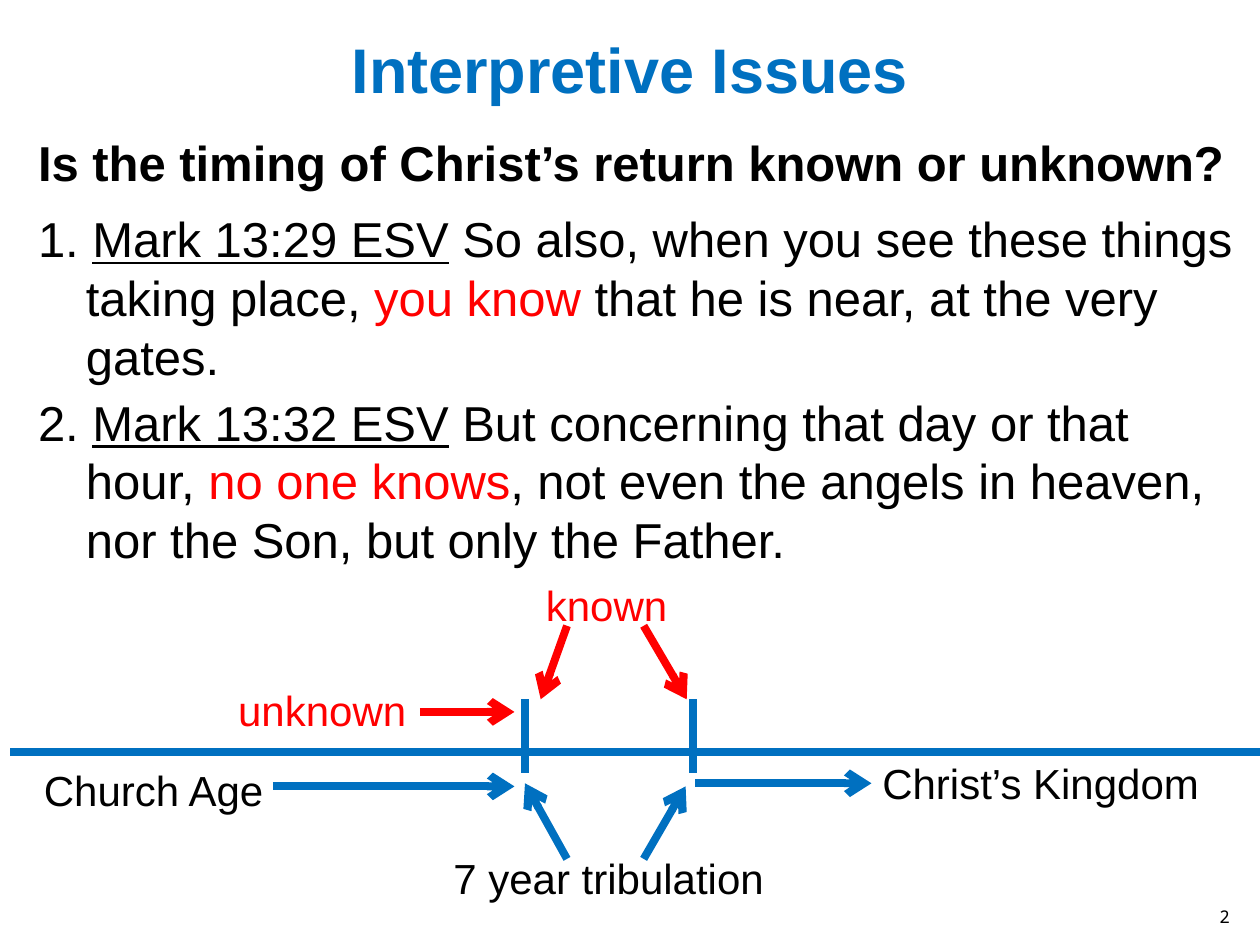
import pptx
import pptx.dml.color
import pptx.enum.shapes
import pptx.enum.text
import pptx.oxml
import pptx.oxml.ns
import pptx.util
from dataclasses import dataclass

COLUMNS, ROWS = 120, 90
CELL = pptx.util.Inches(10) // COLUMNS
ALIGN = pptx.enum.text.PP_ALIGN
ANCHOR = pptx.enum.text.MSO_ANCHOR


@dataclass(frozen=True)
class Theme:
    font: str = "Arial"
    number_font: str = "Noto Sans Mono"
    blue: str = "0070C0"
    red: str = "FF0000"
    black: str = "000000"
    title: int = 36
    body: int = 28
    label: int = 24
    number: int = 10
    stroke: float = 4.5


THEME = Theme()


def grid(*cells):
    """Turn counts of grid cells into slide lengths."""
    return [round(cell * CELL) for cell in cells]


def style(font, size, color=THEME.black, bold=False, underline=False, name=THEME.font):
    font.name, font.size = name, pptx.util.Pt(size)
    font.bold, font.underline = bold, underline
    font.color.rgb = pptx.dml.color.RGBColor.from_string(color)


def add_frame(slide, box, anchor=ANCHOR.TOP):
    frame = slide.shapes.add_textbox(*grid(*box)).text_frame
    frame.word_wrap = True
    frame.vertical_anchor = anchor
    return frame


def add_text(slide, text, box, size, align=ALIGN.LEFT, anchor=ANCHOR.TOP, **look):
    paragraph = add_frame(slide, box, anchor).paragraphs[0]
    paragraph.text = text
    paragraph.alignment = align
    style(paragraph.runs[0].font, size, **look)


def indent(paragraph, left, first=0):
    properties = paragraph._p.get_or_add_pPr()
    properties.set("marL", str(pptx.util.Inches(left)))
    properties.set("indent", str(pptx.util.Inches(first)))


def add_passages(slide, question, verses, box):
    """Write the question, then each verse with its reference and key phrase marked."""
    frame = add_frame(slide, box)
    heading = frame.paragraphs[0]
    heading.text = question
    heading.space_after = pptx.util.Pt(6)
    indent(heading, 0.12)
    style(heading.runs[0].font, THEME.body, bold=True)
    for number, (reference, before, key, after) in enumerate(verses, 1):
        verse = frame.add_paragraph()
        verse.space_before = pptx.util.Pt(4)
        indent(verse, 0.5, -0.38)
        for text, look in (
            (f"{number}. ", {}),
            (reference, {"underline": True}),
            (before, {}),
            (key, {"color": THEME.red}),
            (after, {}),
        ):
            run = verse.add_run()
            run.text = text
            style(run.font, THEME.body, **look)


def add_line(slide, start, end, color=THEME.blue, arrow=False):
    line = slide.shapes.add_connector(
        pptx.enum.shapes.MSO_CONNECTOR.STRAIGHT, *grid(*start, *end))
    line.line.color.rgb = pptx.dml.color.RGBColor.from_string(color)
    line.line.width = pptx.util.Pt(THEME.stroke)
    if arrow:
        head = pptx.oxml.parse_xml(
            f'<a:tailEnd {pptx.oxml.ns.nsdecls("a")} type="arrow"/>')
        line.line._get_or_add_ln().append(head)
    line._element.spPr.append(
        pptx.oxml.parse_xml(f'<a:effectLst {pptx.oxml.ns.nsdecls("a")}/>'))


def add_timeline(slide):
    start, end = 50, 66
    tick_top, tick_bottom = 66.6, 73.6
    axis = 71.6
    add_line(slide, (1, axis), (COLUMNS, axis))
    for column in (start, end):
        add_line(slide, (column, tick_bottom), (column, tick_top))

    for text, color, box in (
        ("Church Age", THEME.black, (3, 72.2, 37, 6)),
        ("unknown", THEME.red, (21.5, 64.6, 20, 6)),
        ("Christ’s Kingdom", THEME.black, (82.85, 71.55, 37, 6)),
        ("7 year tribulation", THEME.black, (42, 80.6, 37, 6)),
        ("known", THEME.red, (50.8, 54.6, 14.3, 6)),
    ):
        add_text(slide, text, box, THEME.label, color=color)

    known_row, tribulation_row = 59.6, 81.8
    left, right = 54, 61.3
    for tail, tip, color in (
        ((26, 74.9), (start - 1, 74.9), THEME.blue),
        ((40, 67.8), (start - 1, 67.8), THEME.red),
        ((66.2, 74.6), (83, 74.6), THEME.blue),
        ((right, tribulation_row), (65.3, 74.9), THEME.blue),
        ((left, tribulation_row), (start, 74.6), THEME.blue),
        ((left, known_row), (51.5, tick_top), THEME.red),
        ((right, known_row), (65.4, tick_top), THEME.red),
    ):
        add_line(slide, tail, tip, color, arrow=True)


def main():
    deck = pptx.Presentation()
    deck.slide_width, deck.slide_height = grid(COLUMNS, ROWS)
    slide = deck.slides.add_slide(deck.slide_layouts[6])
    add_passages(
        slide,
        "Is the timing of Christ’s return known or unknown?",
        (
            ("Mark 13:29 ESV", " So also, when you see these things taking place, ",
             "you know ", "that he is near, at the very gates."),
            ("Mark 13:32 ESV", " But concerning that day or that hour, ",
             "no one knows",
             ", not even the angels in heaven, nor the Son, but only the Father."),
        ),
        (1, 12, 118, 66.8),
    )
    add_text(slide, "Interpretive Issues", (6, 1, 108, 11), THEME.title,
             ALIGN.CENTER, ANCHOR.MIDDLE, color=THEME.blue, bold=True)
    add_timeline(slide)
    add_text(slide, "2", (113.5, 84.1, 4.8, 4.8), THEME.number,
             ALIGN.RIGHT, ANCHOR.BOTTOM, name=THEME.number_font)
    deck.save("out.pptx")


if __name__ == "__main__":
    main()
